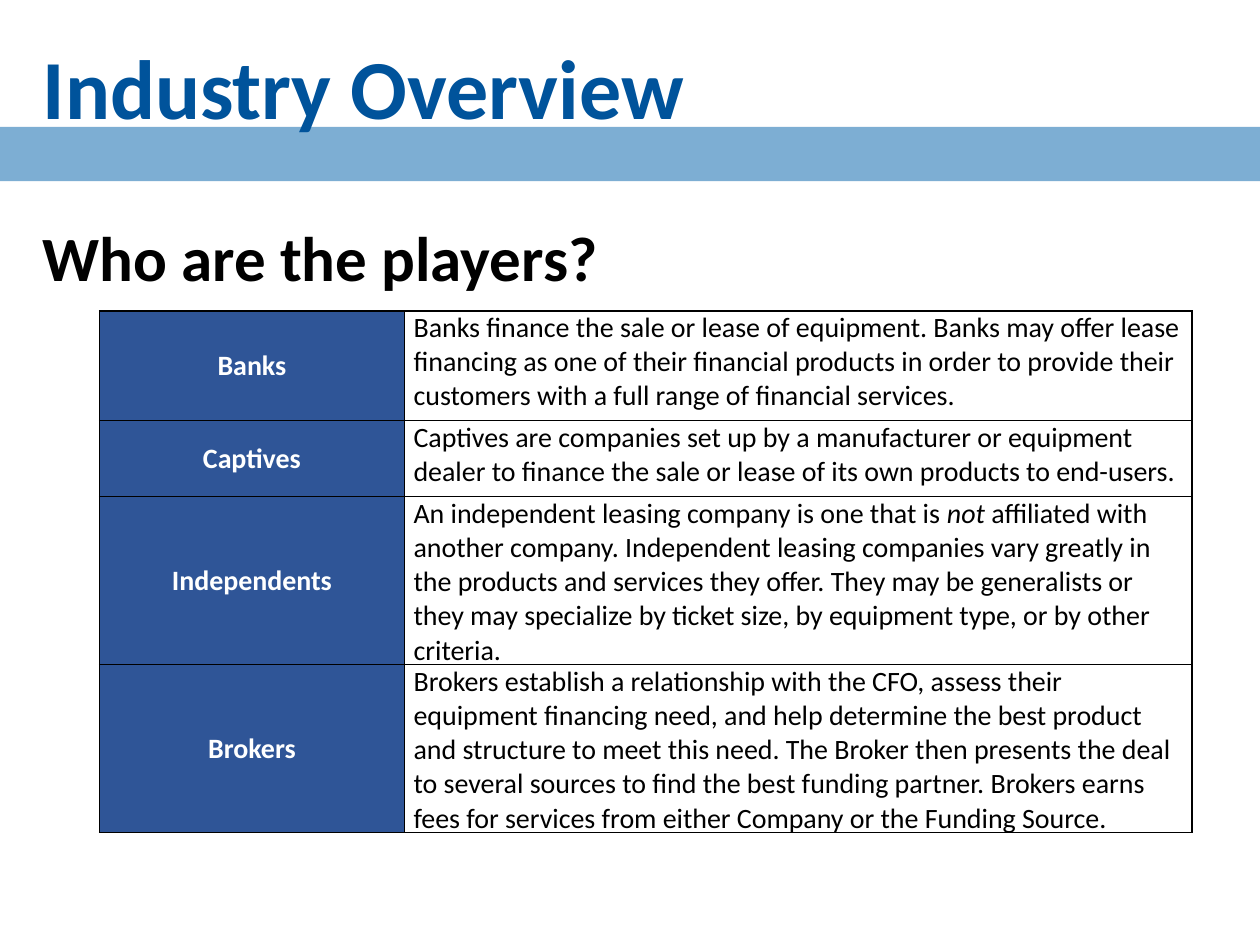
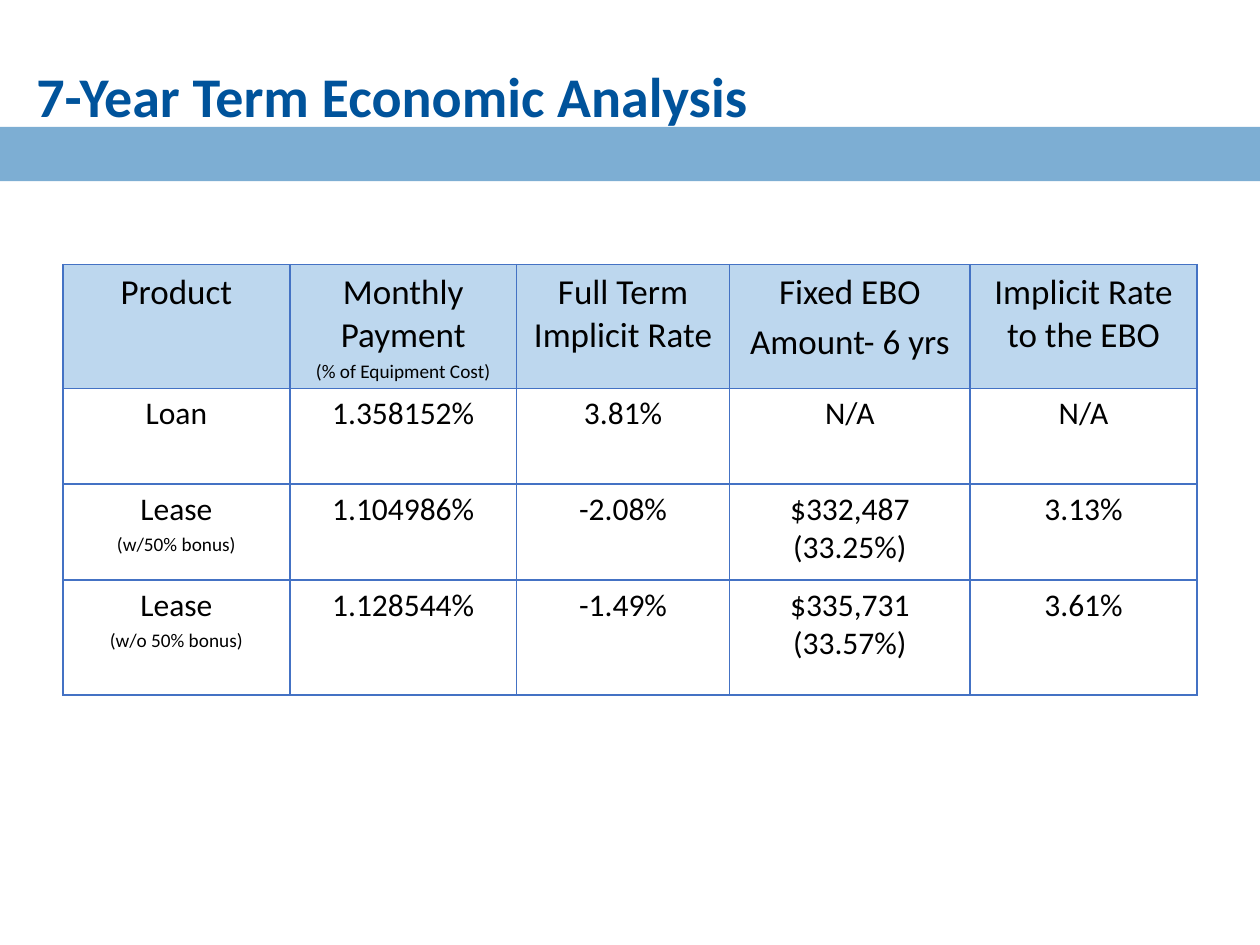
from lxml.etree import SubElement
from pptx import Presentation
from pptx.dml.color import RGBColor
from pptx.enum.shapes import MSO_SHAPE
from pptx.enum.text import MSO_ANCHOR, PP_ALIGN
from pptx.oxml.ns import qn
from pptx.util import Pt

WIDE, HIGH = 720, 540
NAVY, SKY, BLACK, WHITE = "00539B", "7DAED3", "000000", "FFFFFF"
DEEP, PALE, EDGE = "2F5597", "BDD7EE", "4472C4"

PLAYERS = [
    ("Banks", "Banks finance the sale or lease of equipment. Banks may offer lease financing as one of their financial products in order to provide their customers with a full range of financial services."),
    ("Captives", "Captives are companies set up by a manufacturer or equipment dealer to finance the sale or lease of its own products to end-users."),
    ("Independents", "An independent leasing company is one that is *not* affiliated with another company. Independent leasing companies vary greatly in the products and services they offer. They may be generalists or they may specialize by ticket size, by equipment type, or by other criteria."),
    ("Brokers", "Brokers establish a relationship with the CFO, assess their equipment financing need, and help determine the best product and structure to meet this need. The Broker then presents the deal to several sources to find the best funding partner. Brokers earns fees for services from either Company or the Funding Source."),
]

RATES = [
    ("Product", "Monthly Payment\n(% of Equipment Cost)", "Full Term Implicit Rate",
     "Fixed EBO\nAmount- 6 yrs", "Implicit Rate to the EBO"),
    ("Loan", "1.358152%", "3.81%", "N/A", "N/A"),
    ("Lease\n(w/50% bonus)", "1.104986%", "-2.08%", "$332,487 (33.25%)", "3.13%"),
    ("Lease\n(w/o 50% bonus)", "1.128544%", "-1.49%", "$335,731 (33.57%)", "3.61%"),
]


def paint(code):
    return RGBColor.from_string(code)


def style(thing, form):
    for key, value in form.items():
        setattr(thing, key, value)


def write(para, text, size, color=BLACK, bold=False):
    for spot, part in enumerate(text.split("*")):
        run = para.add_run()
        run.text = part
        style(run.font, {"name": "Calibri", "size": Pt(size), "bold": bold,
                         "italic": spot % 2 == 1})
        run.font.color.rgb = paint(color)


def add_text(slide, box, text, size, color, space=1.0):
    frame = slide.shapes.add_textbox(*map(Pt, box)).text_frame
    frame.word_wrap = True
    para = frame.paragraphs[0]
    para.line_spacing = space
    write(para, text, size, color, True)


def add_frame(deck, title, box, size):
    slide = deck.slides.add_slide(deck.slide_layouts[6])
    band = slide.shapes.add_shape(MSO_SHAPE.RECTANGLE, *map(Pt, (0, 72.6, WIDE, 31)))
    band.shadow.inherit = False
    band.fill.solid()
    band.fill.fore_color.rgb = paint(SKY)
    band.line.fill.background()
    add_text(slide, box, title, size, NAVY)
    return slide


def add_edge(cell, color):
    props = cell._tc.get_or_add_tcPr()
    for side in ("lnL", "lnR", "lnT", "lnB"):
        line = SubElement(props, qn("a:" + side), w=str(Pt(1)))
        fill = SubElement(line, qn("a:solidFill"))
        SubElement(fill, qn("a:srgbClr"), val=color)


def add_grid(slide, box, cols, rows, edge):
    grid = slide.shapes.add_table(len(rows), len(cols), *map(Pt, box)).table
    style(grid, {"first_row": False, "horz_banding": False})
    for col, width in zip(grid.columns, cols):
        col.width = Pt(width)
    for row, height in zip(grid.rows, rows):
        row.height = Pt(height)
    for cell in grid.iter_cells():
        add_edge(cell, edge)
        cell.fill.background()
    return grid


def fill_cell(cell, color):
    cell.fill.solid()
    cell.fill.fore_color.rgb = paint(color)


def add_players(slide, box):
    left, top, width, height = box
    grid = add_grid(slide, box, (174.2, width - 174.2), (62.8, 43.4, 96, 96), BLACK)
    for row, (name, about) in enumerate(PLAYERS):
        head, body = grid.cell(row, 0), grid.cell(row, 1)
        for cell in (head, body):
            style(cell, {"margin_left": Pt(5.3), "margin_right": Pt(5.3),
                         "margin_top": 0, "margin_bottom": 0})
        head.vertical_anchor = MSO_ANCHOR.MIDDLE
        fill_cell(head, DEEP)
        para = head.text_frame.paragraphs[0]
        para.alignment = PP_ALIGN.CENTER
        write(para, name, 16, WHITE, True)
        write(body.text_frame.paragraphs[0], about, 16)


def add_rates(slide, box):
    cols = (129.6, 129.6, 121.7, 137.5, 129.6)
    grid = add_grid(slide, box, cols, (70.3, 54.8, 54.8, 65.8), EDGE)
    for row, texts in enumerate(RATES):
        for col, text in enumerate(texts):
            cell = grid.cell(row, col)
            if row == 0:
                fill_cell(cell, PALE)
            frame = cell.text_frame
            for spot, line in enumerate(text.split("\n")):
                para = frame.add_paragraph() if spot else frame.paragraphs[0]
                note = spot and line.startswith("(")
                size = 11 if note else 18 if row else 20
                style(para, {"alignment": PP_ALIGN.CENTER,
                             "space_before": Pt(size * 0.2 if spot else 0)})
                write(para, line, size)


def main():
    deck = Presentation()
    style(deck, {"slide_width": Pt(WIDE), "slide_height": Pt(HIGH)})
    slide = add_frame(deck, "Industry Overview", (17.3, 16.6, 542, 65.5), 48)
    add_text(slide, (17.3, 126, 664, 50.4), "Who are the players?", 36, BLACK, 0.9)
    add_players(slide, (56.9, 177.6, 624.2, 298.2))
    slide = add_frame(deck, "7-Year Term Economic Analysis", (13.7, 31.7, 542, 46), 32)
    add_rates(slide, (36, 151.2, 648, 245.7))
    deck.save("out.pptx")


if __name__ == "__main__":
    main()
